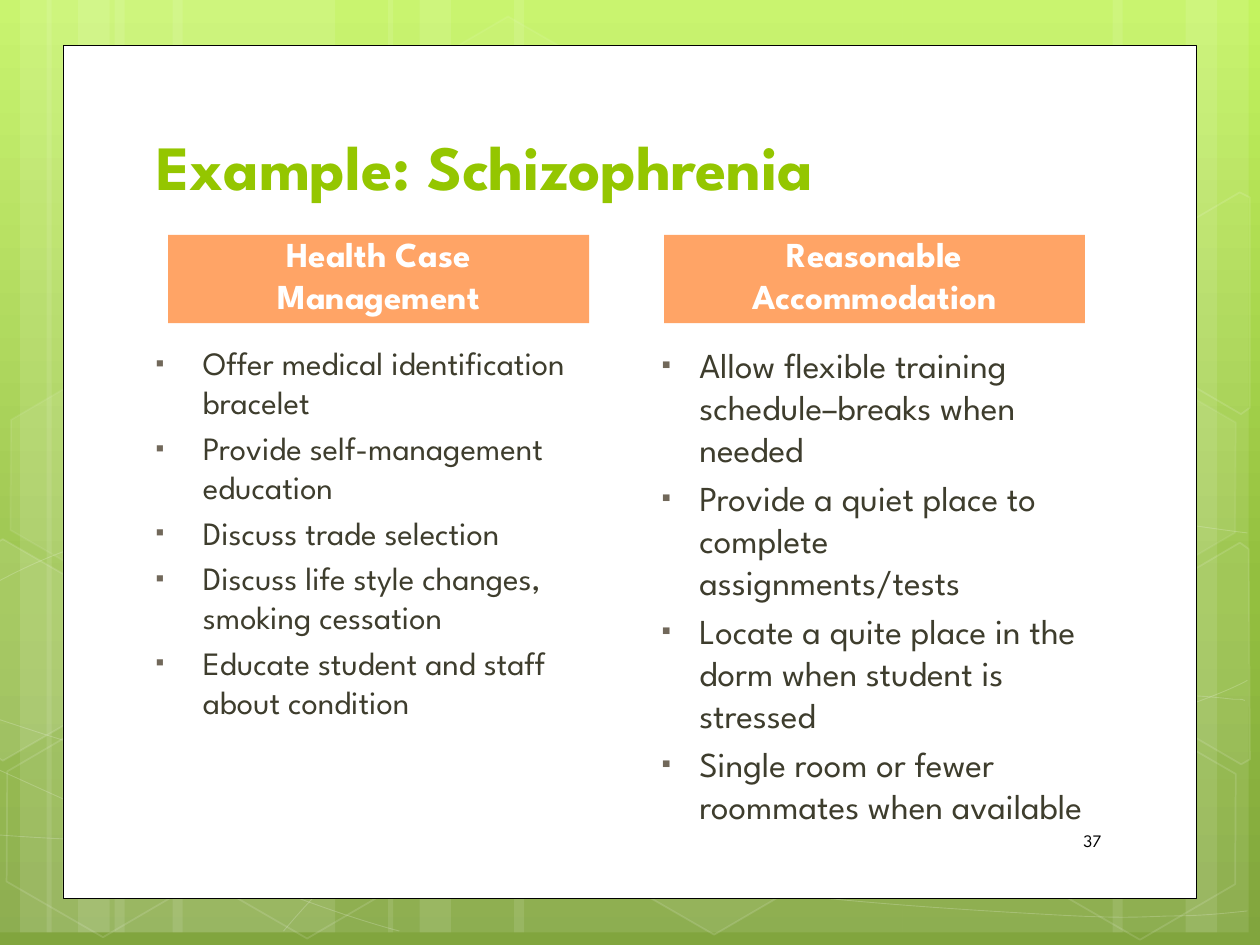
import math
from dataclasses import dataclass
from typing import Optional

import pptx
import pptx.dml.color
import pptx.enum.shapes
import pptx.enum.text
import pptx.oxml.ns
import pptx.util
from lxml import etree

qn = pptx.oxml.ns.qn
Pt = pptx.util.Pt
Anchor = pptx.enum.text.MSO_ANCHOR
Align = pptx.enum.text.PP_ALIGN
Shape = pptx.enum.shapes.MSO_SHAPE

COLUMNS, ROWS = 100, 75  # square grid over the slide
CELL = pptx.util.Inches(10) / COLUMNS
TILT = 30  # degrees, shared by all hexagons
FONT = "League Spartan"
WHITE, BLACK, GREEN = "FFFFFF", "000000", "94C600"
ORANGE, INK, BULLET = "FFA466", "3E3D2D", "71685A"
Points = list[tuple[float, float]]


@dataclass
class Hexagon:
    left: float
    top: float
    fill_alpha: int = 0
    line_alpha: int = 12


@dataclass
class CutHexagon:
    center: tuple[float, float]
    points: Points
    fill_alpha: int = 0


@dataclass
class Column:
    header: str
    header_left: float
    list_left: float
    list_height: float
    hanging: float
    size: float
    header_space: Optional[float]
    items: list[str]


STRIPES = [(9.1, 17.5), (-0.9, 5), (1.6, 8.3), (13.7, 17.5), (3.7, 5), (6.2, 8.3),
           (71.6, 17.5), (94.1, 5), (88.3, 8.3), (40.8, 30.8), (30.8, 5), (33.3, 8.3)]

# Each curve is a start point followed by three points per Bezier segment.
CURVES: list[Points] = [
    [(-1, 66.2), (4.4, 66.6), (9.8, 66.9), (17.3, 66.7), (24.8, 66.6), (34, 66.5),
     (44, 65.4), (54.1, 64.4), (68.3, 62.5), (77.4, 60.6), (86.6, 58.7), (95.9, 55.7),
     (99, 54)],
    [(-1, 46.6), (1.8, 45.1), (4.7, 43.6), (10.4, 42.1), (16.1, 40.6), (24.1, 38.4),
     (33, 37.7), (41.9, 36.9), (52.6, 36.9), (63.6, 37.7), (74.6, 38.4), (93, 41.6),
     (99, 42.3)],
    [(-1.2, 60.6), (10.9, 66.1), (23, 71.6), (31.7, 73.9)],
    [(-1, 56.8), (2.1, 57.8), (5.2, 58.9), (11, 60.5), (16.9, 62.1), (25.6, 64.5),
     (33.9, 66.2), (42.2, 67.9), (52.8, 69.7), (61, 70.8), (69.3, 71.8), (78.2, 72.3),
     (83.5, 72.6), (88.8, 72.9), (90.2, 72.8), (92.7, 72.7), (95.3, 72.7), (97.1, 72.5),
     (99, 72.3)],
    [(22.5, 73.9), (24.2, 71.9), (26, 69.9), (28.4, 68), (30.9, 66.2), (34.2, 64.2),
     (37, 62.9), (39.8, 61.5), (41.5, 60.9), (45.2, 59.9), (48.9, 58.9), (55.6, 57.4),
     (59.1, 56.8), (62.6, 56.1), (63.1, 56.1), (66.2, 55.8), (69.3, 55.6), (74.2, 55.3),
     (77.7, 55.2), (81.1, 55.1), (86.9, 55.2), (86.9, 55.2), (89, 55.2), (91.4, 55.2),
     (93.5, 55.2), (95.4, 55.2), (97, 55.4), (97.9, 55.5), (98.8, 55.5), (98.5, 55.5),
     (98.8, 55.6)],
]

HEXAGONS = [Hexagon(31.6, 2.5, 4, 8), Hexagon(47.9, 57.8, 6), Hexagon(-0.6, 58),
            Hexagon(-0.3, 30.1, 7, 8), Hexagon(7.6, 44.1), Hexagon(15.6, 58.1),
            Hexagon(7.8, 16.1), Hexagon(81.7, 58.2), Hexagon(81.7, 30.3, 7, 8)]

CUT_HEXAGONS = [
    CutHexagon((1.8, 52.5), [(-0.9, 43.5), (0.2, 42.8), (7.8, 47.2), (7.8, 56),
                             (0.2, 60.4), (-0.9, 59.7)], 10),
    CutHexagon((96.7, 50.9), [(90.9, 47.5), (98.4, 43.1), (99.1, 43.6), (99.2, 60.3),
                              (98.5, 60.7), (90.8, 56.2)], 4),
    CutHexagon((96.7, 23.1), [(90.9, 19.7), (98.4, 15.3), (99.2, 15.7), (99.2, 32.4),
                              (98.5, 32.9), (90.8, 28.4)]),
]

LISTS = [
    Column("Health Case Management", 13.35, 11.35, 39.8, 3.8, 18.6, None, [
        "Offer medical identification bracelet",
        "Provide self-management education",
        "Discuss trade selection",
        "Discuss life style changes, smoking cessation",
        "Educate student and staff about condition"]),
    Column("Reasonable Accommodation", 52.7, 50.75, 37.1, 3, 20, 6, [
        "Allow flexible training schedule–breaks when needed",
        "Provide a quiet place to complete assignments/tests",
        "Locate a quite place in the dorm when student is stressed",
        "Single room or fewer roommates when available"]),
]


def cells(*counts: float) -> list[int]:
    return [round(n * CELL) for n in counts]


def paint(fill, color: str) -> None:
    fill.solid()
    fill.fore_color.rgb = pptx.dml.color.RGBColor.from_string(color)


def set_alpha(parent, percent: int) -> None:
    clr = parent.find(qn("a:solidFill")).find(qn("a:srgbClr"))
    etree.SubElement(clr, qn("a:alpha"), val=str(percent * 1000))


def tint(sp, fill_alpha: int, line_alpha: int, width: float = 1) -> None:
    """Paint a shape in translucent white; zero alpha means no paint."""
    sp.shadow.inherit = False
    sp_pr = sp._element.spPr
    for fill, alpha in ((sp.fill, fill_alpha), (sp.line.fill, line_alpha)):
        if alpha:
            paint(fill, WHITE)
            set_alpha(sp_pr if fill is sp.fill else sp_pr.find(qn("a:ln")), alpha)
        else:
            fill.background()
    if line_alpha:
        sp.line.width = Pt(width)


def draw_outline(shapes, points: Points, close: bool):
    start, *rest = [cells(*point) for point in points]
    builder = shapes.build_freeform(*start)
    builder.add_line_segments(rest, close=close)
    return builder.convert_to_shape()


def draw_curve(shapes, points: Points) -> None:
    sp = draw_outline(shapes, points, False)
    lines = list(sp._element.iter(qn("a:lnTo")))
    for i in range(0, len(lines), 3):
        bezier = etree.SubElement(lines[i].getparent(), qn("a:cubicBezTo"))
        for line in lines[i:i + 3]:
            bezier.append(line[0])
            line.getparent().remove(line)
    tint(sp, 0, 20, 0.5)


def draw_cut_hexagon(shapes, cut: CutHexagon) -> None:
    cos, sin = math.cos(math.radians(TILT)), math.sin(math.radians(TILT))
    cx, cy = cut.center
    upright = [(cx + (x - cx) * cos + (y - cy) * sin, cy - (x - cx) * sin + (y - cy) * cos)
               for x, y in cut.points]
    sp = draw_outline(shapes, upright, True)
    sp.rotation = TILT
    tint(sp, cut.fill_alpha, 12)


def draw_backdrop(s) -> None:
    s.background.fill.gradient()
    stops = s._element.find(".//" + qn("a:gsLst"))
    stops.getparent().find(qn("a:lin")).set("ang", "5400000")
    for stop in list(stops):
        stops.remove(stop)
    for pos, color in ((0, "C3F35F"), (62, "93BF3F"), (100, "81A53E")):
        gs = etree.SubElement(stops, qn("a:gs"), pos=str(pos * 1000))
        etree.SubElement(gs, qn("a:srgbClr"), val=color)

    shapes = s.shapes.add_group_shape().shapes
    for left, width in STRIPES:
        tint(shapes.add_shape(Shape.RECTANGLE, *cells(left, -1, width, ROWS)), 10, 0)
    for curve in CURVES:
        draw_curve(shapes, curve)
    for h in HEXAGONS:
        sp = shapes.add_shape(Shape.HEXAGON, *cells(h.left, h.top, 17.5, 15.2))
        sp.adjustments[0] = 0.285
        sp.rotation = TILT
        tint(sp, h.fill_alpha, h.line_alpha)
    for cut in CUT_HEXAGONS:
        draw_cut_hexagon(shapes, cut)

    card = s.shapes.add_shape(Shape.RECTANGLE, *cells(5, 3.6, 90, 67.7))
    card.shadow.inherit = False
    paint(card.fill, WHITE)
    paint(card.line.fill, BLACK)
    card.line.width = Pt(0.5)


def write(sp, box: tuple, lines: list[str], size: float, color: str, bold: bool = False,
          anchor=Anchor.TOP, align=Align.LEFT) -> list:
    """Place a text shape and return its paragraphs."""
    sp.left, sp.top, sp.width, sp.height = cells(*box)
    tf = sp.text_frame
    tf.word_wrap = True
    tf.auto_size = pptx.enum.text.MSO_AUTO_SIZE.NONE
    tf.vertical_anchor = anchor
    for i, line in enumerate(lines):
        p = tf.add_paragraph() if i else tf.paragraphs[0]
        p.alignment = align
        r = p.add_run()
        r.text = line
        r.font.name, r.font.size, r.font.bold = FONT, Pt(size), bold
        paint(r.font.fill, color)
    return list(tf.paragraphs)


def add_bullet(p, hanging: float) -> None:
    p_pr = p._p.get_or_add_pPr()
    for name, length in zip(("marL", "indent"), cells(3.75, -hanging)):
        p_pr.set(name, str(length))
    etree.SubElement(etree.SubElement(p_pr, qn("a:buClr")), qn("a:srgbClr"), val=BULLET)
    etree.SubElement(p_pr, qn("a:buSzPct"), val="76000")
    etree.SubElement(p_pr, qn("a:buChar"), char="▪")


def fill_column(header, body, column: Column) -> None:
    paint(header.fill, ORANGE)
    p, = write(header, (column.header_left, 18.65, 33.4, 7), [column.header], 20, WHITE,
               True, Anchor.BOTTOM, Align.CENTER)
    if column.header_space:
        p.space_before = Pt(column.header_space)
    for p in write(body, (column.list_left, 26.75, 37.4, column.list_height),
                   column.items, column.size, INK):
        add_bullet(p, column.hanging)


def main() -> None:
    prs = pptx.Presentation()
    prs.slide_width, prs.slide_height = cells(COLUMNS, ROWS)
    s = prs.slides.add_slide(prs.slide_layouts.get_by_name("Comparison"))
    draw_backdrop(s)
    title, *bodies = s.placeholders
    for ph in (title, *bodies):
        s.shapes._spTree.append(ph._element)  # bring in front of the card
    write(title, (11.4, 5.4, 76.8, 11.2), ["Example: Schizophrenia"], 36, GREEN, True,
          Anchor.BOTTOM)
    for header, body, column in zip(bodies[::2], bodies[1::2], LISTS):
        fill_column(header, body, column)
    write(s.shapes.add_textbox(0, 0, 0, 0), (72.8, 64.85, 15.6, 3.7), ["37"], 10, BLACK,
          anchor=Anchor.MIDDLE, align=Align.RIGHT)
    prs.save("out.pptx")


if __name__ == "__main__":
    main()
